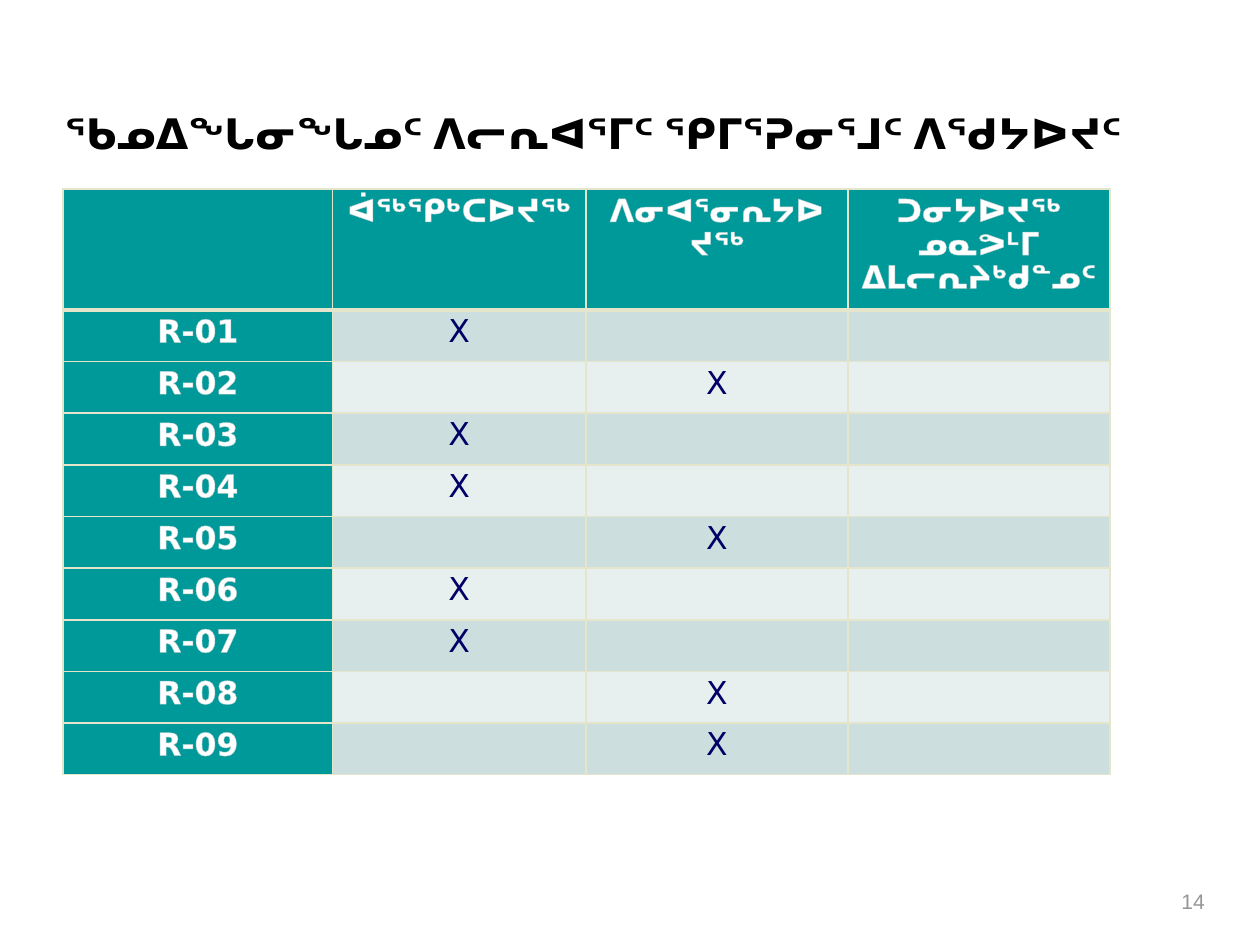
import pptx
import pptx.util
import pptx.dml.color
import pptx.enum.text
import pptx.oxml
import pptx.oxml.ns
from lxml import etree

Inches = pptx.util.Inches
Pt = pptx.util.Pt
RGBColor = pptx.dml.color.RGBColor
PP_ALIGN = pptx.enum.text.PP_ALIGN
MSO_ANCHOR = pptx.enum.text.MSO_ANCHOR
qn = pptx.oxml.ns.qn

BLACK = RGBColor(0x00, 0x00, 0x00)
WHITE = RGBColor(0xFF, 0xFF, 0xFF)
GREY = RGBColor(0x96, 0x96, 0x96)
NAVY = RGBColor(0x00, 0x00, 0x66)
TEAL = RGBColor(0x00, 0x99, 0x99)
BANDS = (RGBColor(0xCC, 0xDE, 0xDE), RGBColor(0xE7, 0xEF, 0xEF))
BORDER = RGBColor(0xE5, 0xE5, 0xCC)
OUTLINE = RGBColor(0xAA, 0xCA, 0xCA)

TITLE = "ᖃᓄᐃᖓᓂᖓᓄᑦ ᐱᓕᕆᐊᕐᒥᑦ ᕿᒥᕐᕈᓂᕐᒧᑦ ᐱᖁᔭᐅᔪᑦ"
HEADERS = ("", "ᐋᖅᕿᒃᑕᐅᔪᖅ", "ᐱᓂᐊᕐᓂᕆᔭᐅᔪᖅ", "ᑐᓂᔭᐅᔪᖅ ᓄᓇᕗᒻᒥ ᐃᒪᓕᕆᔨᒃᑯᓐᓄᑦ")
MARKED_COLUMNS = (1, 2, 1, 1, 2, 1, 1, 2, 2)
COLUMN_WIDTHS = (2.14, 2.01, 2.08, 2.08)
HEADER_HEIGHT = 0.96
ROW_HEIGHT = 0.41


def format_paragraph(p, name, size, color, bold, align):
    """Set the font and alignment of a paragraph."""
    p.alignment = align
    p.font.name = name
    p.font.size = Pt(size)
    p.font.bold = bold
    p.font.color.rgb = color


def make_line(tag, width, color):
    """Return a solid line element."""
    ln = etree.Element(qn(tag), w=str(Pt(width)))
    fill = etree.SubElement(ln, qn("a:solidFill"))
    etree.SubElement(fill, qn("a:srgbClr"), val=str(color))
    return ln


def add_title(s, left, top, width, height):
    """Place and format the slide title."""
    sp = s.shapes.title
    sp.left, sp.top, sp.width, sp.height = left, top, width, height
    tf = sp.text_frame
    tf.margin_left = tf.margin_right = tf.margin_top = tf.margin_bottom = 0
    tf.vertical_anchor = MSO_ANCHOR.MIDDLE
    tf.auto_size = pptx.enum.text.MSO_AUTO_SIZE.NONE
    tf.text = TITLE
    p = tf.paragraphs[0]
    p.line_spacing = Pt(24)
    format_paragraph(p, "Roboto", 24, BLACK, True, PP_ALIGN.CENTER)


def fill_cell(cell, text, fill, name, color, bold, top_width, bottom_width):
    """Give a table cell its borders, fill and text."""
    tcPr = cell._tc.get_or_add_tcPr()
    widths = {"a:lnL": 1, "a:lnR": 1, "a:lnT": top_width, "a:lnB": bottom_width}
    for tag, width in widths.items():
        tcPr.append(make_line(tag, width, BORDER))
    cell.fill.solid()
    cell.fill.fore_color.rgb = fill
    p = cell.text_frame.paragraphs[0]
    p.line_spacing = 0.9
    format_paragraph(p, name, 18, color, bold, PP_ALIGN.CENTER)
    if text:
        r = p.add_run()
        r.text = text
        if bold:
            r._r.get_or_add_rPr().insert(0, make_line("a:ln", 0.8, OUTLINE))


def add_status_table(s, left, top, width, height):
    """Add the table that marks the status of each recommendation."""
    rows = len(MARKED_COLUMNS) + 1
    table = s.shapes.add_table(rows, len(HEADERS), left, top, width, height).table
    for column, column_width in zip(table.columns, COLUMN_WIDTHS):
        column.width = Inches(column_width)
    for i, row in enumerate(table.rows):
        row.height = Inches(ROW_HEIGHT if i else HEADER_HEIGHT)
    for j, header in enumerate(HEADERS):
        fill_cell(table.cell(0, j), header, TEAL, "Roboto", WHITE, True, 1, 3)
    for i, marked in enumerate(MARKED_COLUMNS, 1):
        top_width = 3 if i == 1 else 1
        fill_cell(table.cell(i, 0), f"R-{i:02d}", TEAL, "DejaVu Sans", WHITE, True, top_width, 1)
        for j in range(1, len(HEADERS)):
            mark = "X" if j == marked else ""
            fill_cell(table.cell(i, j), mark, BANDS[(i - 1) % 2], "DejaVu Sans", NAVY, False, top_width, 1)


def add_page_number(s, left, top, width, height):
    """Add the page number."""
    tf = s.shapes.add_textbox(left, top, width, height).text_frame
    tf.word_wrap = True
    tf.text = "14"
    format_paragraph(tf.paragraphs[0], "Arial", 12, GREY, False, PP_ALIGN.RIGHT)


def main():
    """Build and save the presentation."""
    prs = pptx.Presentation()
    prs.slide_width = Inches(10)
    prs.slide_height = Inches(7.5)
    s = prs.slides.add_slide(prs.slide_layouts[5])
    add_title(s, Inches(0.42), Inches(0.92), Inches(8.58), Inches(0.33))
    add_page_number(s, Inches(8.83), Inches(7), Inches(0.83), Inches(0.33))
    add_status_table(s, Inches(0.5), Inches(1.5), Inches(8.31), Inches(4.65))
    prs.save("out.pptx")


if __name__ == "__main__":
    main()
